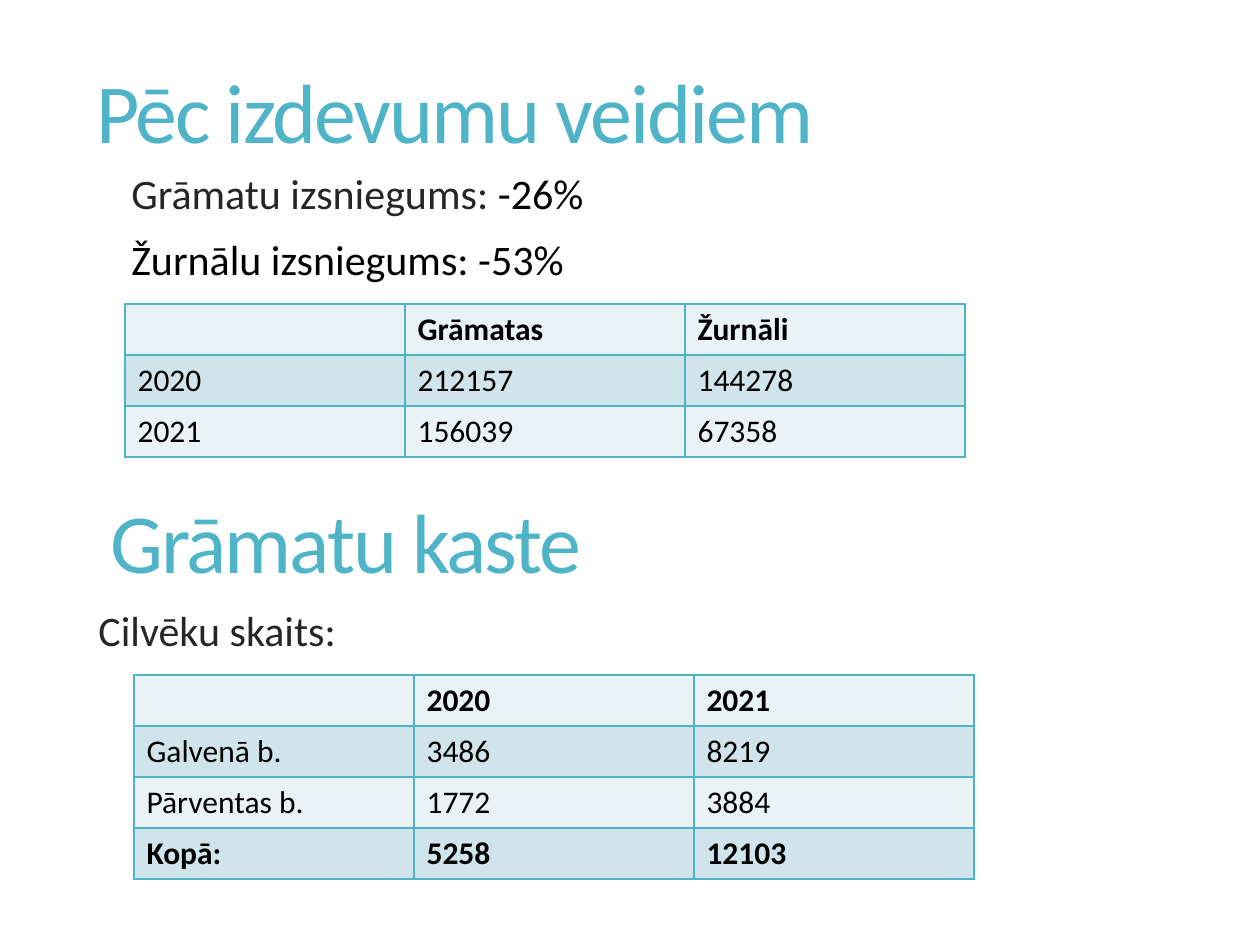
from lxml.etree import SubElement
from pptx import Presentation
from pptx.dml.color import RGBColor
from pptx.enum.text import MSO_ANCHOR
from pptx.oxml.ns import qn
from pptx.util import Inches, Pt

PIXELS_PER_INCH = 126
COLORS = {
    "accent": "50B4C8",
    "body": "262626",
    "black": "000000",
    "light band": "E9F2F5",
    "dark band": "D0E5EB",
}


def px(length):
    return round(length * Inches(1) / PIXELS_PER_INCH)


def color(name):
    return RGBColor.from_string(COLORS[name])


class SlideBuilder:
    font_name = "Calibri"
    title_size, body_size, table_size = 48, 24, 18
    column_width, row_height = 280, 51
    indent = 12

    def __init__(self, slide):
        self.slide = slide

    def style(self, font, size, color_name, bold=False):
        font.name = self.font_name
        font.size = Pt(size)
        font.bold = bold
        font.color.rgb = color(color_name)

    def text_frame(self, left, top, width, height):
        shape = self.slide.shapes.add_textbox(px(left), px(top), px(width), px(height))
        shape.text_frame.word_wrap = True
        return shape.text_frame

    def title(self, text, left, top, width, height):
        frame = self.text_frame(left, top, width, height)
        frame.vertical_anchor = MSO_ANCHOR.MIDDLE
        paragraph = frame.paragraphs[0]
        paragraph.line_spacing = 0.9
        run = paragraph.add_run()
        run.text = text
        self.style(run.font, self.title_size, "accent")
        run.font._element.set("spc", "-120")

    def body(self, lines, left, top, width, height, bullet=None):
        """Each line is a list of (text, color name) runs."""
        frame = self.text_frame(left, top, width, height)
        for index, line in enumerate(lines):
            paragraph = frame.add_paragraph() if index else frame.paragraphs[0]
            paragraph.line_spacing = 0.85
            paragraph.space_before = Pt(13)
            properties = paragraph._p.get_or_add_pPr()
            properties.set("marL", str(px(self.indent)))
            properties.set("indent", str(-px(self.indent)))
            if bullet:
                SubElement(properties, qn("a:buChar"), char=bullet)
            for text, color_name in line:
                run = paragraph.add_run()
                run.text = text
                self.style(run.font, self.body_size, color_name)

    def border(self, cell):
        properties = cell._tc.get_or_add_tcPr()
        for side in ("lnL", "lnR", "lnT", "lnB"):
            line = SubElement(properties, qn(f"a:{side}"), w=str(Pt(1)))
            fill = SubElement(line, qn("a:solidFill"))
            SubElement(fill, qn("a:srgbClr"), val=COLORS["accent"])

    def table(self, rows, left, top, bold_rows):
        column_count = len(rows[0])
        table = self.slide.shapes.add_table(
            len(rows), column_count, px(left), px(top),
            px(self.column_width * column_count), px(self.row_height * len(rows)),
        ).table
        table.first_row = table.horz_banding = False
        for row_index, values in enumerate(rows):
            table.rows[row_index].height = px(self.row_height)
            band = "dark band" if row_index % 2 else "light band"
            for column_index, value in enumerate(values):
                cell = table.cell(row_index, column_index)
                self.border(cell)
                cell.fill.solid()
                cell.fill.fore_color.rgb = color(band)
                cell.text = value
                self.style(cell.text_frame.paragraphs[0].font, self.table_size,
                           "black", row_index in bold_rows)


def main():
    presentation = Presentation()
    presentation.slide_width = Inches(10)
    presentation.slide_height = Inches(7.5)
    builder = SlideBuilder(presentation.slides.add_slide(presentation.slide_layouts[6]))

    # Loans by type of publication
    builder.title("Pēc izdevumu veidiem", 84, 37, 794, 159)
    builder.body(
        [
            [("Grāmatu izsniegums: ", "body"), ("-26%", "black")],
            [("Žurnālu izsniegums: -53%", "black")],
        ],
        98, 169, 1111, 307, bullet=" ",
    )
    builder.table(
        [
            ["", "Grāmatas", "Žurnāli"],
            ["2020", "212157", "144278"],
            ["2021", "156039", "67358"],
        ],
        125, 304, bold_rows={0},
    )

    # Book box visitors
    builder.title("Grāmatu kaste", 98, 457, 586, 179)
    builder.body([[("Cilvēku skaits:", "body")]], 86, 606, 917, 316)
    builder.table(
        [
            ["", "2020", "2021"],
            ["Galvenā b.", "3486", "8219"],
            ["Pārventas b.", "1772", "3884"],
            ["Kopā:", "5258", "12103"],
        ],
        134, 675, bold_rows={0, 3},
    )

    presentation.save("out.pptx")


if __name__ == "__main__":
    main()
